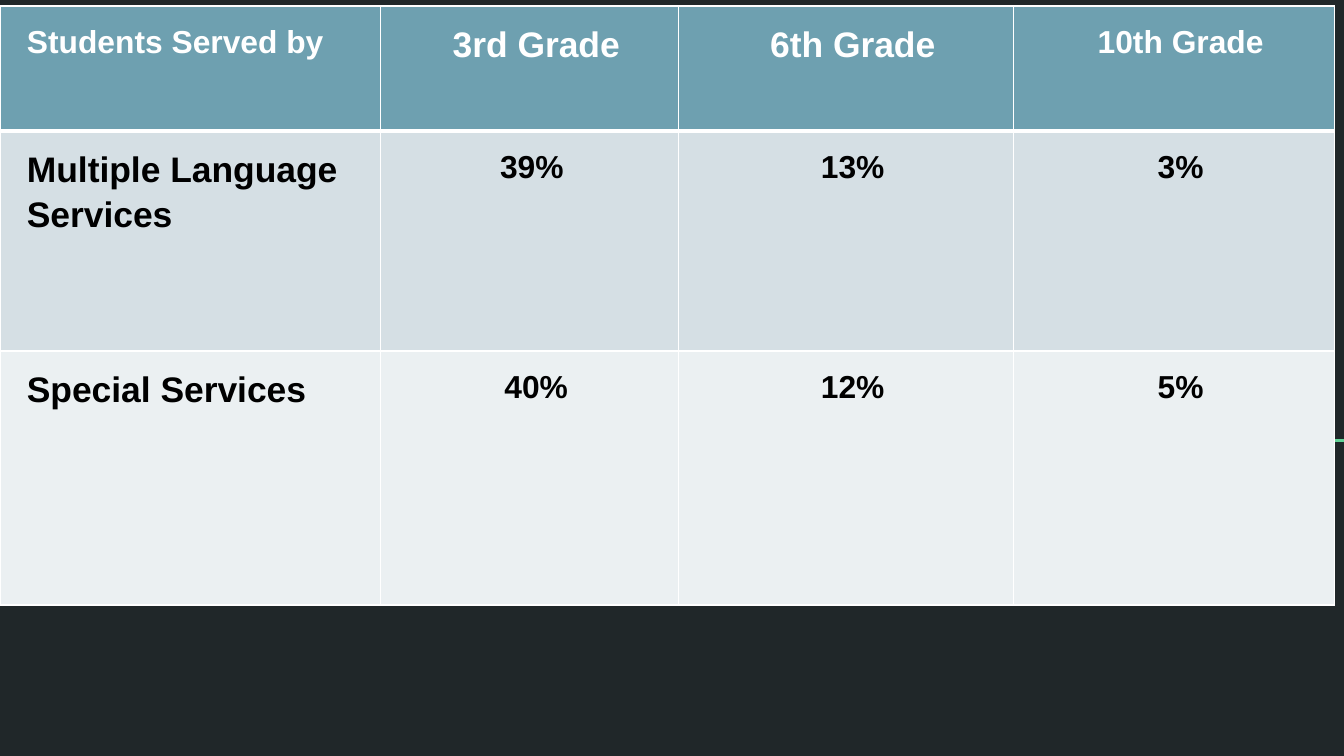
import lxml.etree
import pptx
import pptx.dml.color
import pptx.enum.shapes
import pptx.enum.text
import pptx.oxml.ns
import pptx.util

Pt = pptx.util.Pt
RGBColor = pptx.dml.color.RGBColor
ALIGN = pptx.enum.text.PP_ALIGN
qn = pptx.oxml.ns.qn

BACKGROUND = RGBColor(0x20, 0x27, 0x29)
GREEN = RGBColor(0x63, 0xD2, 0x97)
WHITE = RGBColor(0xFF, 0xFF, 0xFF)
BLACK = RGBColor(0x00, 0x00, 0x00)
ROW_FILLS = (
    RGBColor(0x6E, 0xA0, 0xB0),
    RGBColor(0xD5, 0xDF, 0xE4),
    RGBColor(0xEB, 0xF0, 0xF2),
)

COLUMN_WIDTHS = (203.8, 159.8, 179.3, 172.1)
ROW_HEIGHTS = (67, 118, 136)
THIN, THICK = 0.95, 2.86
INSET = 7.2
SMALL, LARGE = 17, 19

# Each cell holds its wording and text size.
SERVICE_ROWS = (
    (("Students Served by", SMALL), ("3rd Grade", LARGE),
     ("6th Grade", LARGE), ("10th Grade", SMALL)),
    (("Multiple Language Services", LARGE), ("39% ", SMALL),
     ("13%", SMALL), ("3%", SMALL)),
    (("Special Services", LARGE), ("40%", SMALL),
     ("12%", SMALL), ("5%", SMALL)),
)


def add_accent_line(slide, left, top, width):
    line = slide.shapes.add_connector(
        pptx.enum.shapes.MSO_CONNECTOR.STRAIGHT,
        Pt(left), Pt(top), Pt(left + width), Pt(top))
    line.line.color.rgb = GREEN
    line.line.width = Pt(1.5)
    lxml.etree.SubElement(line._element.spPr, qn("a:effectLst"))


def set_borders(cell, top, bottom):
    """Draw white borders; the side ones are always thin."""
    properties = cell._tc.get_or_add_tcPr()
    widths = {"a:lnL": THIN, "a:lnR": THIN, "a:lnT": top, "a:lnB": bottom}
    for position, (tag, width) in enumerate(widths.items()):
        border = lxml.etree.Element(qn(tag), w=str(Pt(width)))
        fill = lxml.etree.SubElement(border, qn("a:solidFill"))
        lxml.etree.SubElement(fill, qn("a:srgbClr"), val=str(WHITE))
        properties.insert(position, border)


def write_cell(cell, wording, size, color, alignment):
    cell.margin_left = cell.margin_right = Pt(INSET)
    cell.margin_top = cell.margin_bottom = Pt(INSET)
    cell.text = wording
    paragraph = cell.text_frame.paragraphs[0]
    paragraph.alignment = alignment
    paragraph.line_spacing = 1.15
    paragraph._p.get_or_add_pPr().set("marL", str(Pt(INSET)))
    paragraph.font.name = "Arial"
    paragraph.font.size = Pt(size)
    paragraph.font.bold = True
    paragraph.font.color.rgb = color


def add_services_table(slide, left, top):
    table = slide.shapes.add_table(
        len(ROW_HEIGHTS), len(COLUMN_WIDTHS), Pt(left), Pt(top),
        Pt(sum(COLUMN_WIDTHS)), Pt(sum(ROW_HEIGHTS))).table
    for column, width in zip(table.columns, COLUMN_WIDTHS):
        column.width = Pt(width)
    for r, (row, height) in enumerate(zip(table.rows, ROW_HEIGHTS)):
        row.height = Pt(height)
        for c, (wording, size) in enumerate(SERVICE_ROWS[r]):
            cell = table.cell(r, c)
            cell.fill.solid()
            cell.fill.fore_color.rgb = ROW_FILLS[r]
            set_borders(cell, top=THICK if r == 1 else THIN,
                        bottom=THICK if r == 0 else THIN)
            write_cell(cell, wording, size, WHITE if r == 0 else BLACK,
                       ALIGN.LEFT if c == 0 else ALIGN.CENTER)


def main():
    presentation = pptx.Presentation()
    presentation.slide_width = Pt(720)
    presentation.slide_height = Pt(405)
    slide = presentation.slides.add_slide(presentation.slide_layouts[6])
    slide.background.fill.solid()
    slide.background.fill.fore_color.rgb = BACKGROUND
    add_accent_line(slide, 0, 236, 720)
    add_services_table(slide, 0, 3.2)
    presentation.save("out.pptx")


if __name__ == "__main__":
    main()
